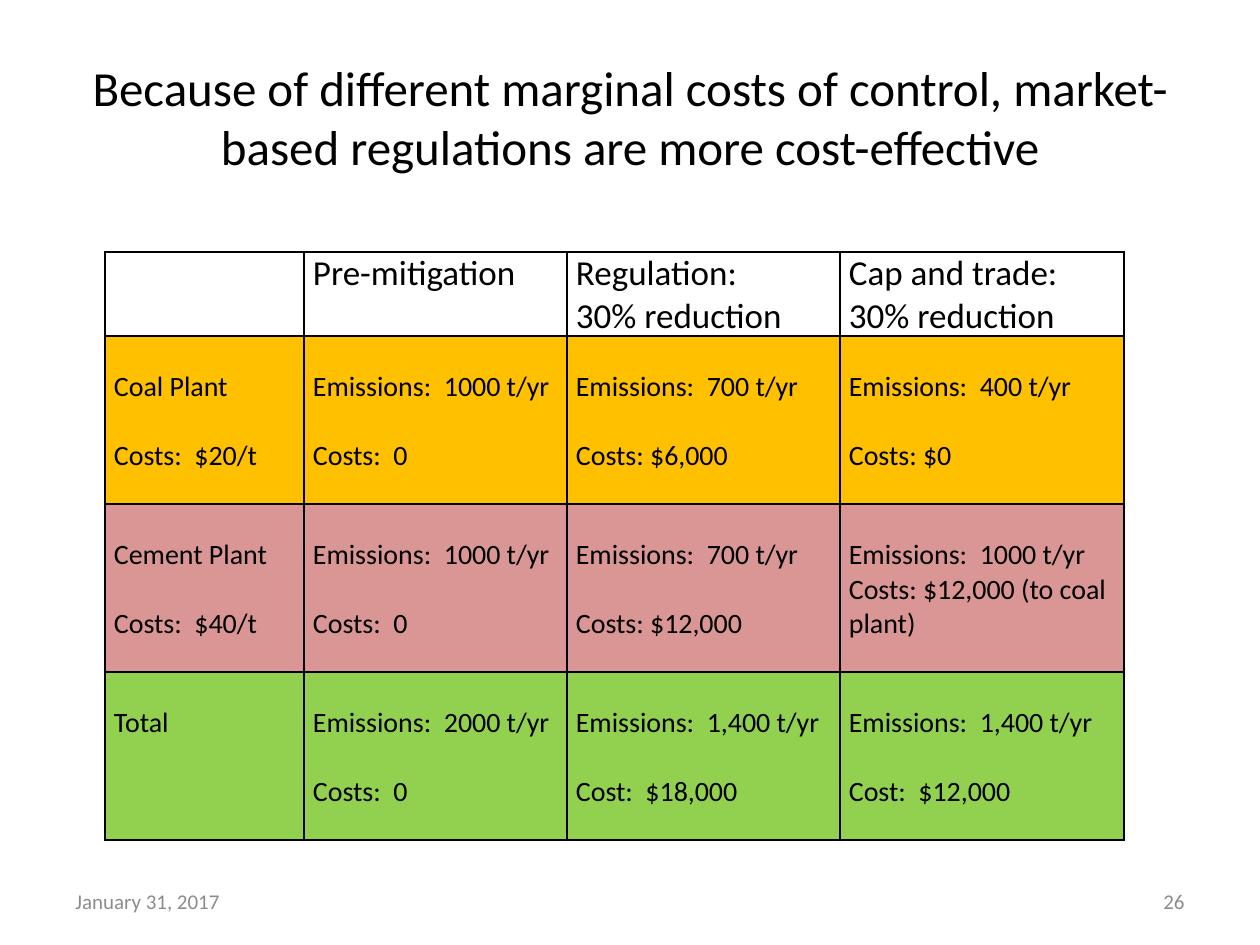
"""Build a slide comparing emission control costs under three policies."""
import lxml.etree
import pptx
import pptx.dml.color
import pptx.enum.text
import pptx.oxml
import pptx.oxml.ns
import pptx.util

RGB = pptx.dml.color.RGBColor
ALIGN = pptx.enum.text.PP_ALIGN
MIDDLE = pptx.enum.text.MSO_ANCHOR.MIDDLE

BLACK = RGB(0x00, 0x00, 0x00)
GREY = RGB(0x8C, 0x8C, 0x8C)
AMBER = RGB(0xFF, 0xC0, 0x00)
ROSE = RGB(0xD9, 0x96, 0x94)
GREEN = RGB(0x92, 0xD0, 0x50)

TITLE = ("Because of different marginal costs of control, "
         "market-based regulations are more cost-effective")
FOOTERS = [("January 31, 2017", 63, ALIGN.LEFT), ("26", 903, ALIGN.RIGHT)]
HEADINGS = [[], ["Pre-mitigation"], ["Regulation:", "30% reduction"],
            ["Cap and trade:  30% reduction"]]
PLANTS = [
    (AMBER, [["Coal Plant", "Costs:  $20/t"],
             ["Emissions:  1000 t/yr", "Costs:  0"],
             ["Emissions:  700 t/yr", "Costs: $6,000"],
             ["Emissions:  400 t/yr", "Costs: $0"]]),
    (ROSE, [["Cement Plant", "Costs:  $40/t"],
            ["Emissions:  1000 t/yr", "Costs:  0"],
            ["Emissions:  700 t/yr", "Costs: $12,000"],
            ["Emissions:  1000 t/yr", "Costs: $12,000 (to coal plant)"]]),
    (GREEN, [["Total"],
             ["Emissions:  2000 t/yr", "Costs:  0"],
             ["Emissions:  1,400 t/yr", "Cost:  $18,000"],
             ["Emissions:  1,400 t/yr", "Cost:  $12,000"]]),
]
SINGLE_SPACED = {"Costs: $12,000 (to coal plant)"}
COLUMN_WIDTHS = [199, 263, 273, 284]
ROW_HEIGHTS = [84, 168, 168, 168]


def px(length):
    return pptx.util.Emu(round(length * 914400 / 126))


def place(part, left, top, width, height):
    box = dict(left=left, top=top, width=width, height=height)
    for name, length in box.items():
        setattr(part, name, px(length))


def write(frame, lines, size, color=BLACK, align=ALIGN.LEFT, spacing=1):
    for number, line in enumerate(lines):
        paragraph = frame.add_paragraph() if number else frame.paragraphs[0]
        paragraph.alignment = align
        paragraph.line_spacing = 1.0 if line in SINGLE_SPACED else float(spacing)
        run = paragraph.add_run()
        run.text = line
        font_format = dict(name="Calibri", size=pptx.util.Pt(size), bold=False)
        for name, value in font_format.items():
            setattr(run.font, name, value)
        run.font.color.rgb = color


def add_borders(cell):
    properties = cell._tc.get_or_add_tcPr()
    for position, side in enumerate(("lnL", "lnR", "lnT", "lnB")):
        border = pptx.oxml.parse_xml(
            f'<a:{side} {pptx.oxml.ns.nsdecls("a")} w="12700"><a:solidFill>'
            f'<a:srgbClr val="{BLACK}"/></a:solidFill></a:{side}>')
        properties.insert(position, border)


def fill_cell(cell, lines, size, spacing, color):
    margins = dict(margin_left=9, margin_right=9, margin_top=0, margin_bottom=0)
    for name, length in margins.items():
        setattr(cell, name, px(length))
    write(cell.text_frame, lines, size, spacing=spacing)
    if color is None:
        cell.fill.background()
    else:
        cell.fill.solid()
        cell.fill.fore_color.rgb = color
    add_borders(cell)


def add_cost_table(slide):
    rows = [(None, HEADINGS)] + PLANTS
    table = slide.shapes.add_table(
        len(rows), len(COLUMN_WIDTHS), px(105), px(252),
        px(sum(COLUMN_WIDTHS)), px(sum(ROW_HEIGHTS))).table
    for name in ("first_row", "horz_banding"):
        setattr(table, name, False)
    for column, width in zip(table.columns, COLUMN_WIDTHS):
        column.width = px(width)
    for row, height, (color, entries) in zip(table.rows, ROW_HEIGHTS, rows):
        row.height = px(height)
        size, spacing = (20, 1) if color is None else (16, 2)
        for cell, lines in zip(row.cells, entries):
            fill_cell(cell, lines, size, spacing, color)


def main():
    deck = pptx.Presentation()
    deck.slide_width, deck.slide_height = px(1260), px(945)
    slide = deck.slides.add_slide(deck.slide_layouts[5])
    title = slide.shapes.title
    place(title, 63, 38, 1134, 157)
    title.text_frame.vertical_anchor = MIDDLE
    write(title.text_frame, [TITLE], 28, align=ALIGN.CENTER)
    for text, left, align in FOOTERS:
        footer = slide.shapes.add_textbox(0, 0, 0, 0)
        place(footer, left, 876, 294, 50)
        footer.text_frame.word_wrap = True
        footer.text_frame.vertical_anchor = MIDDLE
        write(footer.text_frame, [text], 12, GREY, align)
    add_cost_table(slide)
    deck.save("out.pptx")


if __name__ == "__main__":
    main()
